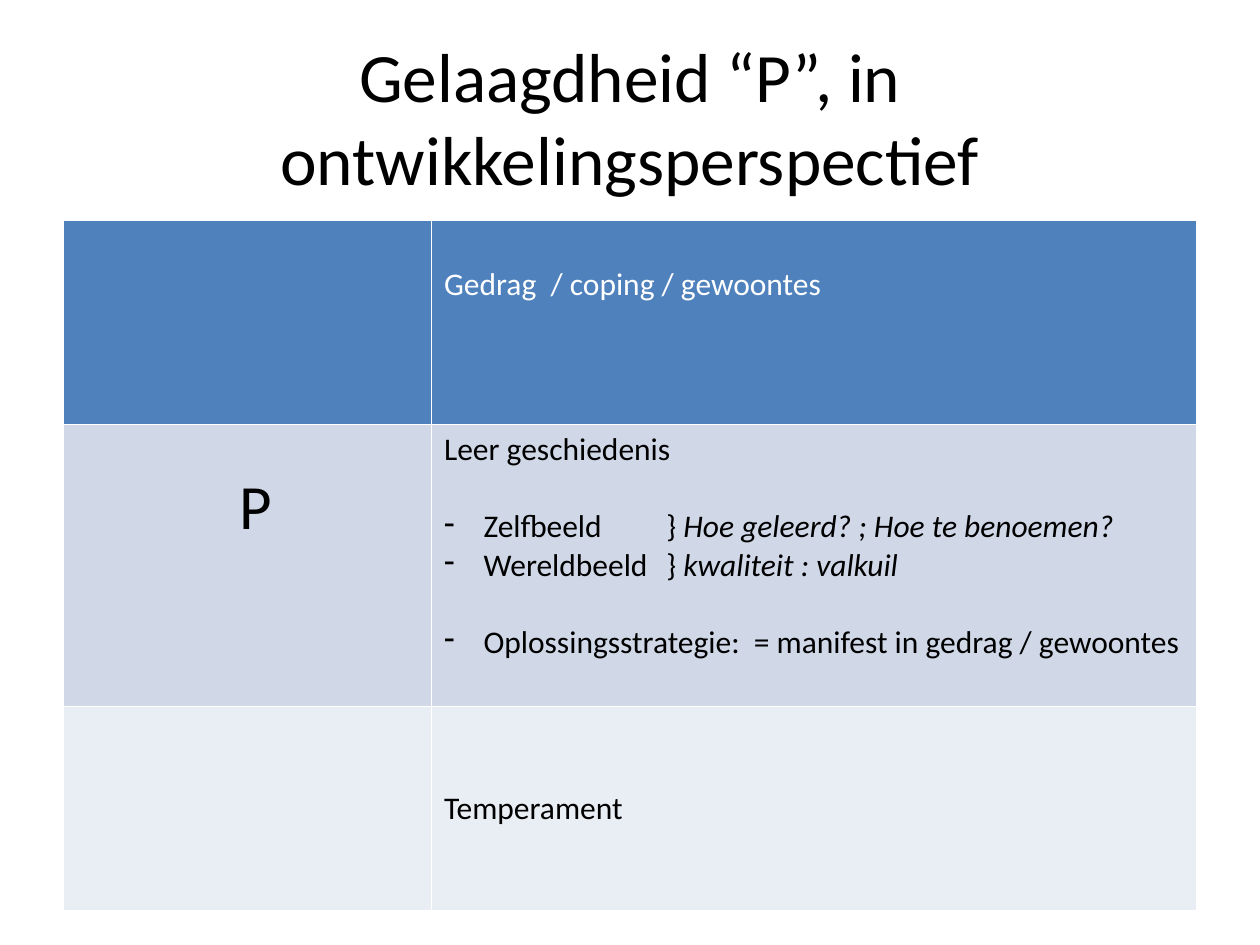
import pptx
import pptx.util
import pptx.dml.color
import pptx.enum.text
import pptx.oxml.ns
import lxml.etree

Pt = pptx.util.Pt
RGB = pptx.dml.color.RGBColor
ALIGN = pptx.enum.text.PP_ALIGN
ANCHOR = pptx.enum.text.MSO_ANCHOR

BLACK = RGB(0x00, 0x00, 0x00)
WHITE = RGB(0xFF, 0xFF, 0xFF)
BLUE = RGB(0x4F, 0x81, 0xBD)
MID = RGB(0xD0, 0xD8, 0xE8)
PALE = RGB(0xE9, 0xED, 0xF4)

LINE = 22  # height of one body line
HANG = 22.5  # hanging indent of the list


def node(parent, tag, **attrs):
    return lxml.etree.SubElement(parent, pptx.oxml.ns.qn(tag), attrs)


def write(para, *parts, font="Calibri", size=18, color=BLACK,
          align=ALIGN.LEFT, before=0, dash=False, tab=None):
    """Fill a paragraph; a part is plain text or (text, italic)."""
    para.alignment = align
    para.space_before = Pt(before)
    for part in parts:
        text, slant = part if isinstance(part, tuple) else (part, False)
        run = para.add_run()
        run.text = text
        run.font.name = font
        run.font.size = Pt(size)
        run.font.italic = slant
        run.font.color.rgb = color
    if dash:
        props = para._p.get_or_add_pPr()
        props.set("marL", str(Pt(HANG)))
        props.set("indent", str(-Pt(HANG)))
        node(props, "a:buFontTx")
        node(props, "a:buChar", char="-")
        if tab:
            stops = node(props, "a:tabLst")
            node(stops, "a:tab", pos=str(Pt(tab)), algn="l")


class Deck:
    def __init__(self, wide, high):
        self.show = pptx.Presentation()
        self.show.slide_width, self.show.slide_height = Pt(wide), Pt(high)
        self.slide = self.show.slides.add_slide(self.show.slide_layouts[6])

    def title(self, text, left, top, wide, high):
        box = self.slide.shapes.add_textbox(Pt(left), Pt(top), Pt(wide), Pt(high))
        frame = box.text_frame
        frame.word_wrap = True
        frame.vertical_anchor = ANCHOR.MIDDLE
        write(frame.paragraphs[0], text, size=39.6, align=ALIGN.CENTER)

    def table(self, left, top, cols, rows, fills):
        shape = self.slide.shapes.add_table(
            len(rows), len(cols), Pt(left), Pt(top), Pt(sum(cols)), Pt(sum(rows)))
        grid = shape.table
        for col, wide in zip(grid.columns, cols):
            col.width = Pt(wide)
        for row, high, fill in zip(grid.rows, rows, fills):
            row.height = Pt(high)
            for cell in row.cells:
                self.edge(cell)
                cell.fill.solid()
                cell.fill.fore_color.rgb = fill
        return grid

    def edge(self, cell):
        props = cell._tc.get_or_add_tcPr()
        for side in ("L", "R", "T", "B"):
            line = node(props, f"a:ln{side}", w=str(Pt(1)))
            node(node(line, "a:solidFill"), "a:srgbClr", val=str(WHITE))

    def fill(self, cell, *paras, drop=0, shift=0):
        """Write (parts, format) paragraphs, moved down and right."""
        cell.margin_top = Pt(3.6 + drop)
        cell.margin_left = Pt(7.2 + shift)
        frame = cell.text_frame
        for i, (parts, form) in enumerate(paras):
            para = frame.add_paragraph() if i else frame.paragraphs[0]
            write(para, *parts, **form)


def main():
    deck = Deck(720, 540)

    # Title
    deck.title("Gelaagdheid “P”, in ontwikkelingsperspectief", 36, 21.6, 648, 90)

    # Table of layers
    grid = deck.table(36, 126, [210.6, 437.4], [116.6, 161.2, 116.6],
                      [BLUE, MID, PALE])

    # Left column
    deck.fill(grid.cell(1, 0), (["P"], dict(size=36, align=ALIGN.CENTER)),
              drop=LINE, shift=9.6)

    # Right column
    deck.fill(grid.cell(0, 1),
              (["Gedrag  / coping / gewoontes"], dict(color=WHITE)), drop=LINE)
    deck.fill(
        grid.cell(1, 1),
        (["Leer geschiedenis"], {}),
        (["Zelfbeeld\t} ", ("Hoe geleerd? ; Hoe te benoemen?", True)],
         dict(dash=True, tab=127, before=LINE)),
        (["Wereldbeeld\t}", (" kwaliteit : valkuil", True)],
         dict(dash=True, tab=127)),
        (["Oplossingsstrategie:  = manifest in gedrag / gewoontes"],
         dict(dash=True, before=LINE)))
    deck.fill(grid.cell(2, 1), (["Temperament"], {}), drop=2 * LINE)

    deck.show.save("out.pptx")


if __name__ == "__main__":
    main()
